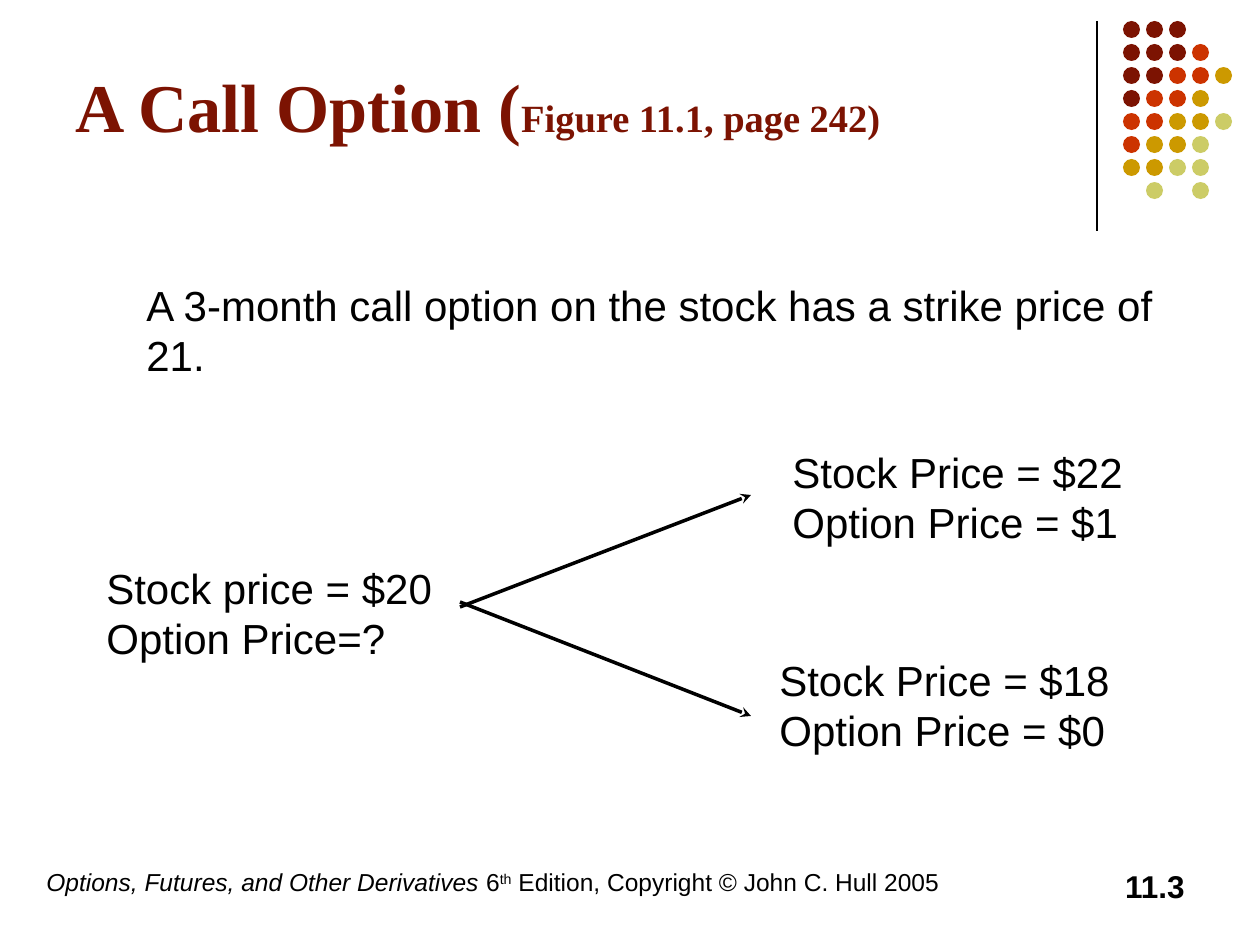
from lxml.etree import SubElement
from pptx import Presentation
from pptx.dml.color import RGBColor
from pptx.enum.shapes import MSO_CONNECTOR, MSO_SHAPE
from pptx.enum.text import MSO_ANCHOR, MSO_AUTO_SIZE, PP_ALIGN
from pptx.oxml.ns import qn
from pptx.util import Emu, Pt

PX_PER_INCH = 126
TITLE_ONLY = 5


def px(length):
    return Emu(round(length * 914400 / PX_PER_INCH))


def color(hex_string):
    return RGBColor.from_string(hex_string)


class SlideBuilder:
    BODY_FONT, TITLE_FONT = "Arial", "Times New Roman"
    INK, MAROON = "000000", "7C1302"

    def __init__(self, slide):
        self.slide = slide

    def format_run(self, run, size, font=BODY_FONT, hex_string=INK, bold=False, italic=False):
        run.font.size = Pt(size)
        run.font.name = font
        run.font.bold = bold
        run.font.italic = italic
        run.font.color.rgb = color(hex_string)

    def title(self, box, parts):
        title = self.slide.shapes.title
        title.left, title.top, title.width, title.height = map(px, box)
        frame = title.text_frame
        frame.auto_size = MSO_AUTO_SIZE.NONE
        frame.vertical_anchor = MSO_ANCHOR.MIDDLE
        paragraph = frame.paragraphs[0]
        paragraph.alignment = PP_ALIGN.LEFT
        for text, size in parts:
            run = paragraph.add_run()
            run.text = text
            self.format_run(run, size, self.TITLE_FONT, self.MAROON, bold=True)

    def text(self, box, text, size=24, align=PP_ALIGN.LEFT, bold=False):
        frame = self.slide.shapes.add_textbox(*map(px, box)).text_frame
        frame.word_wrap = True
        frame.text = text
        for paragraph in frame.paragraphs:
            paragraph.alignment = align
            for run in paragraph.runs:
                self.format_run(run, size, bold=bold)
        return frame

    def line(self, start, end, width, arrow=False):
        line = self.slide.shapes.add_connector(
            MSO_CONNECTOR.STRAIGHT, *map(px, (*start, *end)))
        line.line.color.rgb = color(self.INK)
        line.line.width = Pt(width)
        if arrow:
            SubElement(line.line._get_or_add_ln(), qn("a:tailEnd"), type="stealth")
        SubElement(line._element.spPr, qn("a:effectLst"))

    def dot(self, left, top, size, hex_string):
        dot = self.slide.shapes.add_shape(MSO_SHAPE.OVAL, *map(px, (left, top, size, size)))
        dot.shadow.inherit = False
        dot.fill.solid()
        dot.fill.fore_color.rgb = color(hex_string)
        dot.line.fill.background()

    def dot_grid(self, left, top, pitch, size, rows, palette):
        for row, keys in enumerate(rows):
            for column, key in enumerate(keys):
                if key in palette:
                    self.dot(left + column * pitch, top + row * pitch, size, palette[key])


def main():
    presentation = Presentation()
    presentation.slide_width, presentation.slide_height = px(1260), px(945)
    slide = presentation.slides.add_slide(presentation.slide_layouts[TITLE_ONLY])
    builder = SlideBuilder(slide)

    # Corner decoration: one letter per dot colour
    builder.line((1097, 21), (1097, 231), 0.75)
    palette = {"M": builder.MAROON, "R": "CC3300", "G": "CC9900", "Y": "CCCC66"}
    rows = ["MMM", "MMMR", "MMRRG", "MRRG", "RRGGY", "RGGY", "GGYY", " Y Y"]
    builder.dot_grid(1123, 21, 23, 17, rows, palette)

    # Title and statement
    builder.title((63, 16, 1040, 179), [("A Call Option (", 39), ("Figure 11.1, page 242)", 22)])
    statement = "A 3-month call option on the stock has a strike price of 21."
    builder.text((134, 273, 1039, 113), statement)

    # One-step tree
    for start, end in [((460, 607), (751, 495)), ((460, 602), (751, 716))]:
        builder.line(start, end, 2, arrow=True)
    nodes = [
        ((780, 440, 398, 113), "Stock Price = $22\nOption Price = $1"),
        ((767, 648, 456, 113), "Stock Price = $18\nOption Price = $0"),
        ((94, 556, 377, 113), "Stock price = $20\nOption Price=?"),
    ]
    for box, text in nodes:
        builder.text(box, text)

    # Footer with italic book title and superscript, then page number
    footer = builder.text((34, 861, 1042, 63), "Options, Futures, and Other Derivatives", 14)
    paragraph = footer.paragraphs[0]
    paragraph.runs[0].font.italic = True
    for text in (" 6", "th", " Edition, Copyright © John C. Hull 2005"):
        run = paragraph.add_run()
        run.text = text
        builder.format_run(run, 14)
    paragraph.runs[2].font._element.set("baseline", "30000")
    builder.text((903, 861, 294, 63), "11.3", 18, PP_ALIGN.RIGHT, bold=True)

    presentation.save("out.pptx")


if __name__ == "__main__":
    main()
